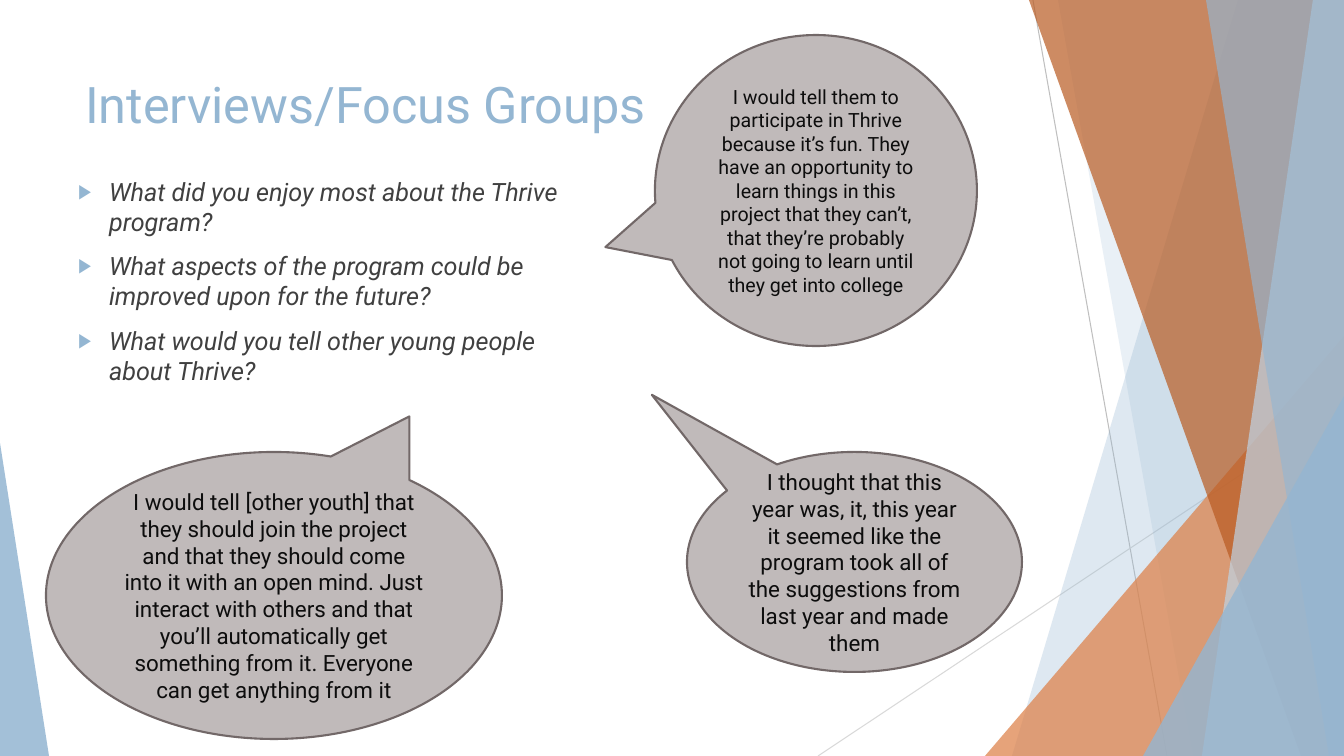
from lxml.etree import SubElement
from pptx import Presentation
from pptx.dml.color import RGBColor
from pptx.enum.shapes import MSO_CONNECTOR, MSO_SHAPE
from pptx.enum.text import MSO_ANCHOR, MSO_AUTO_SIZE, PP_ALIGN
from pptx.oxml.ns import qn
from pptx.util import Pt

EMU_PER_PX = 12192000 / 1344
WIDTH, HEIGHT = 1344, 756

THEME = {
    "font": "Roboto",
    "blue": "94B6D2", "pale_blue": "BFD3E4",
    "orange": "DD8047", "rust": "B95B22",
    "line_dark": "BFBFBF", "line_light": "D9D9D9",
    "bubble": "C0BABA", "bubble_line": "726868",
    "body": "404040", "quote": "0D0D0D",
    "title_size": 36, "body_size": 18,
}


def px(*lengths):
    return [round(length * EMU_PER_PX) for length in lengths]


def format_text(para, size, colour, align, italic=False):
    para.alignment = align
    for span in para.runs:
        span.font.name = THEME["font"]
        span.font.size = Pt(size)
        span.font.italic = italic
        span.font.color.rgb = RGBColor.from_string(THEME[colour])


deck = Presentation()
deck.slide_width, deck.slide_height = px(WIDTH, HEIGHT)
page = deck.slides.add_slide(deck.slide_layouts[1])
title, body = page.placeholders

# Thin crossing lines
for ends, colour in [((1033, 0, 1167, HEIGHT), "line_dark"),
                     ((WIDTH, 406, 818, HEIGHT), "line_light")]:
    line = page.shapes.add_connector(MSO_CONNECTOR.STRAIGHT, *px(*ends))
    line.line.color.rgb = RGBColor.from_string(THEME[colour])
    line.line.width = Pt(0.75)
    SubElement(line.element.spPr, qn("a:effectLst"))

# Translucent panes: a ribbon is (top x, bottom x) and runs to the right edge;
# a triangle is (left, top, width, height, apex)
panes = [
    ((1238, 1012), "blue", 30),
    ((1058, 1193), "blue", 20),
    ((985, 336, 359, 420, 1), "orange", 72),
    ((1029, 1301), "rust", 70),
    ((1313, 1202), "pale_blue", 70),
    ((1206, 1329), "blue", 65),
    ((1143, 396, 201, 360, 1), "blue", 80),
    ((0, 443, 49, 313, 0), "blue", 85),
]
for geometry, colour, opacity in panes:
    if len(geometry) == 2:
        top_x, bottom_x = geometry
        outline = page.shapes.build_freeform(top_x, 0, scale=EMU_PER_PX)
        outline.add_line_segments([(WIDTH, 0), (WIDTH, HEIGHT), (bottom_x, HEIGHT)])
        pane = outline.convert_to_shape()
    else:
        *frame, apex = geometry
        pane = page.shapes.add_shape(MSO_SHAPE.ISOSCELES_TRIANGLE, *px(*frame))
        pane.adjustments[0] = apex
    pane.shadow.inherit = False
    pane.line.fill.background()
    pane.fill.solid()
    pane.fill.fore_color.rgb = RGBColor.from_string(THEME[colour])
    tint = pane.element.spPr.find(".//" + qn("a:srgbClr"))
    SubElement(tint, qn("a:alpha"), val=str(opacity * 1000))

# Title and question list, in front of the panes
tree = title.element.getparent()
for box, frame in [(title, (75, 68, 948, 145)), (body, (17, 171, 581, 175))]:
    tree.append(box.element)
    box.left, box.top, box.width, box.height = px(*frame)
    box.text_frame.word_wrap = True
    box.text_frame.auto_size = MSO_AUTO_SIZE.NONE
    box.text_frame.vertical_anchor = MSO_ANCHOR.TOP

title.text_frame.text = "Interviews/Focus Groups"
format_text(title.text_frame.paragraphs[0], THEME["title_size"], "blue", PP_ALIGN.LEFT)

body.text_frame.text = "\n".join([
    "What did you enjoy most about the Thrive program?",
    "What aspects of the program could be improved upon for the future?",
    "What would you tell other young people about Thrive?",
])
margin, indent = px(82, -31)
for para in body.text_frame.paragraphs:
    format_text(para, THEME["body_size"], "body", PP_ALIGN.LEFT, italic=True)
    para.space_before = Pt(10)
    settings = para.runs[0].font and para._p.get_or_add_pPr()
    settings.set("marL", str(margin))
    settings.set("indent", str(indent))
    bullet_colour = SubElement(settings, qn("a:buClr"))
    SubElement(bullet_colour, qn("a:srgbClr"), val=THEME["blue"])
    SubElement(settings, qn("a:buSzPct"), val="80000")
    SubElement(settings, qn("a:buChar"), char="▶")

# Quote bubbles: frame, tail position, text size, text
quotes = [
    ((655, 35, 322, 311), (-0.654, 0.182), 14,
     "I would tell them to participate in Thrive because it’s fun. They have an "
     "opportunity to learn things in this project that they can’t, that they’re "
     "probably not going to learn until they get into college"),
    ((687, 452, 335, 220), (-0.605, -0.76), 16,
     "I thought that this year was, it, this year it seemed like the program took "
     "all of the suggestions from last year and made them"),
    ((46, 452, 456, 287), (0.297, -0.624), 16,
     "I would tell [other youth] that they should join the project and that they "
     "should come into it with an open mind. Just interact with others and that "
     "you’ll automatically get something from it. Everyone can get anything from it"),
]
for frame, tail, size, quote in quotes:
    bubble = page.shapes.add_shape(MSO_SHAPE.OVAL_CALLOUT, *px(*frame))
    bubble.adjustments[0], bubble.adjustments[1] = tail
    bubble.shadow.inherit = False
    bubble.fill.solid()
    bubble.fill.fore_color.rgb = RGBColor.from_string(THEME["bubble"])
    bubble.line.color.rgb = RGBColor.from_string(THEME["bubble_line"])
    bubble.line.width = Pt(1.5)
    bubble.text_frame.word_wrap = True
    bubble.text_frame.vertical_anchor = MSO_ANCHOR.MIDDLE
    bubble.text_frame.text = quote
    format_text(bubble.text_frame.paragraphs[0], size, "quote", PP_ALIGN.CENTER)

deck.save("out.pptx")
